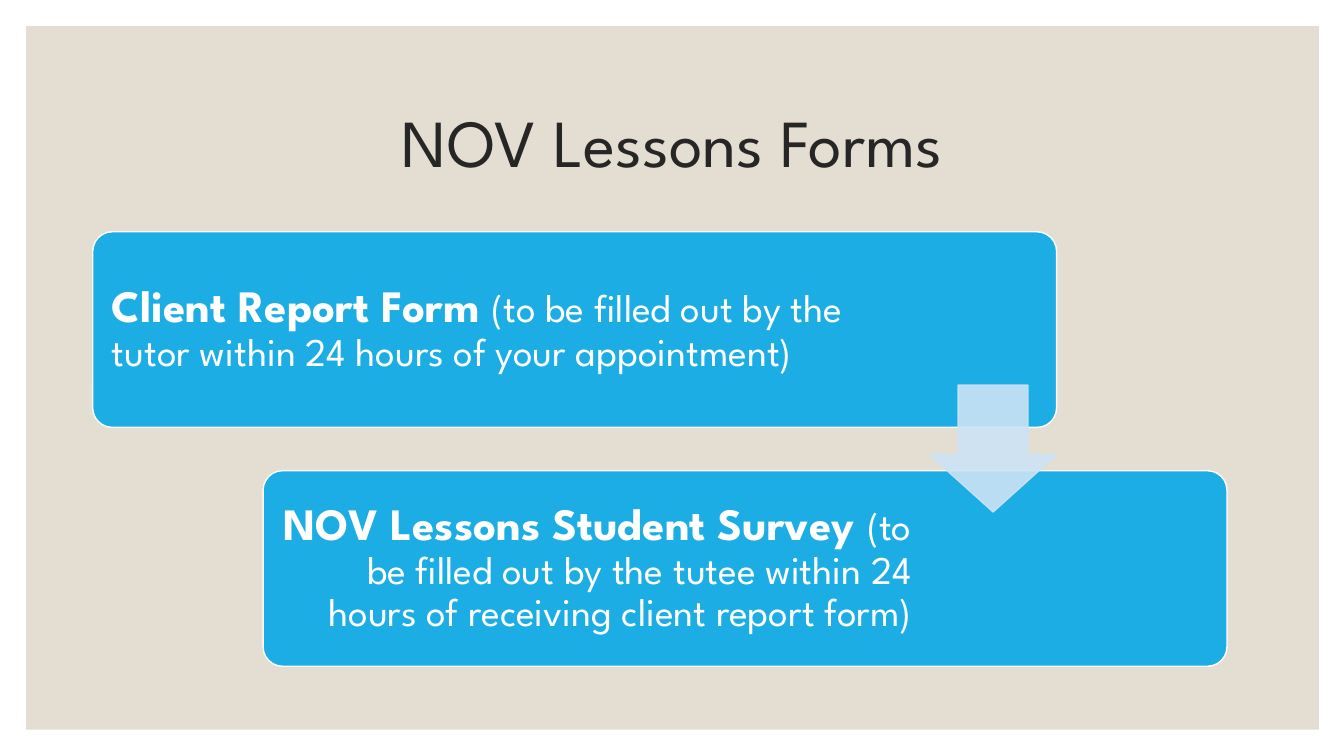
from dataclasses import dataclass

from lxml.etree import SubElement
from pptx import Presentation
from pptx.dml.color import RGBColor as Rgb
from pptx.enum.shapes import MSO_SHAPE as Kind
from pptx.enum.text import MSO_ANCHOR as Anchor
from pptx.enum.text import MSO_AUTO_SIZE as Fit
from pptx.enum.text import PP_ALIGN as Align
from pptx.oxml.ns import qn
from pptx.shapes.autoshape import Shape
from pptx.slide import Slide
from pptx.util import Inches, Pt

FONT = "League Spartan"
COLORS = {
    "panel": "E3DED1",
    "title": "262626",
    "card": "1CADE4",
    "white": "FFFFFF",
    "arrow": "CDE3F5",
}
CARD_W, CARD_H = 9.56, 1.94
PAD = 0.06
INSET = 0.13


@dataclass
class Card:
    left: float
    top: float
    text_w: float
    align: Align
    name: str
    note: str


CARDS = [
    Card(0.92, 2.3, 7.56, Align.LEFT, "Client Report Form ",
         "(to be filled out by the tutor within 24 hours of your appointment)"),
    Card(2.61, 4.67, 6.5, Align.RIGHT, "NOV Lessons Student Survey ",
         "(to be filled out by the tutee within 24 hours of receiving client report form)"),
]


def color(name: str) -> Rgb:
    return Rgb.from_string(COLORS[name])


def add_shape(slide: Slide, kind: Kind, box: tuple[float, ...], fill: str,
              line: str | None = None, adjust: tuple[float, ...] = ()) -> Shape:
    shape = slide.shapes.add_shape(kind, *map(Inches, box))
    shape.shadow.inherit = False
    shape.fill.solid()
    shape.fill.fore_color.rgb = color(fill)
    if line:
        shape.line.color.rgb = color(line)
        shape.line.width = Pt(1)
    else:
        shape.line.fill.background()
    for index, value in enumerate(adjust):
        shape.adjustments[index] = value
    return shape


def set_alpha(shape: Shape, percent: int) -> None:
    """Set the opacity of both fill and line."""
    for node in shape.element.iter(qn("a:srgbClr")):
        SubElement(node, qn("a:alpha")).set("val", str(percent * 1000))


def add_title(slide: Slide, text: str) -> None:
    title = slide.shapes.title
    title.left, title.top = Inches(1.17), Inches(0.7)
    title.width, title.height = Inches(11), Inches(1.5)
    frame = title.text_frame
    frame.text = text
    frame.auto_size = Fit.NONE
    frame.vertical_anchor = Anchor.MIDDLE
    para = frame.paragraphs[0]
    para.alignment = Align.CENTER
    para.line_spacing = 0.9
    para.font.name, para.font.size = FONT, Pt(48)
    para.font.color.rgb = color("title")


def add_card(slide: Slide, card: Card) -> None:
    add_shape(slide, Kind.ROUNDED_RECTANGLE, (card.left, card.top, CARD_W, CARD_H),
              "card", "white", (0.1,))
    box = slide.shapes.add_textbox(
        Inches(card.left + PAD), Inches(card.top + PAD),
        Inches(card.text_w), Inches(CARD_H - 2 * PAD))
    frame = box.text_frame
    frame.word_wrap = True
    frame.vertical_anchor = Anchor.MIDDLE
    frame.margin_left = frame.margin_right = Inches(INSET)
    frame.margin_top = frame.margin_bottom = Inches(INSET)
    para = frame.paragraphs[0]
    para.alignment = card.align
    para.line_spacing = 0.9
    para.font.name = FONT
    para.font.color.rgb = color("white")
    for text, size, bold in ((card.name, 32, True), (card.note, 28, False)):
        run = para.add_run()
        run.text = text
        run.font.size, run.font.bold = Pt(size), bold


def main() -> None:
    deck = Presentation()
    deck.slide_width, deck.slide_height = Inches(13.33), Inches(7.5)
    slide = deck.slides.add_slide(deck.slide_layouts[5])
    add_title(slide, "NOV Lessons Forms")
    panel = add_shape(slide, Kind.RECTANGLE, (0.26, 0.26, 12.82, 6.98), "panel")
    slide.shapes.title.element.addprevious(panel.element)
    for card in CARDS:
        add_card(slide, card)
    arrow = add_shape(slide, Kind.DOWN_ARROW, (9.22, 3.82, 1.26, 1.26),
                      "arrow", "arrow", (0.55, 0.45))
    set_alpha(arrow, 90)
    deck.save("out.pptx")


if __name__ == "__main__":
    main()
